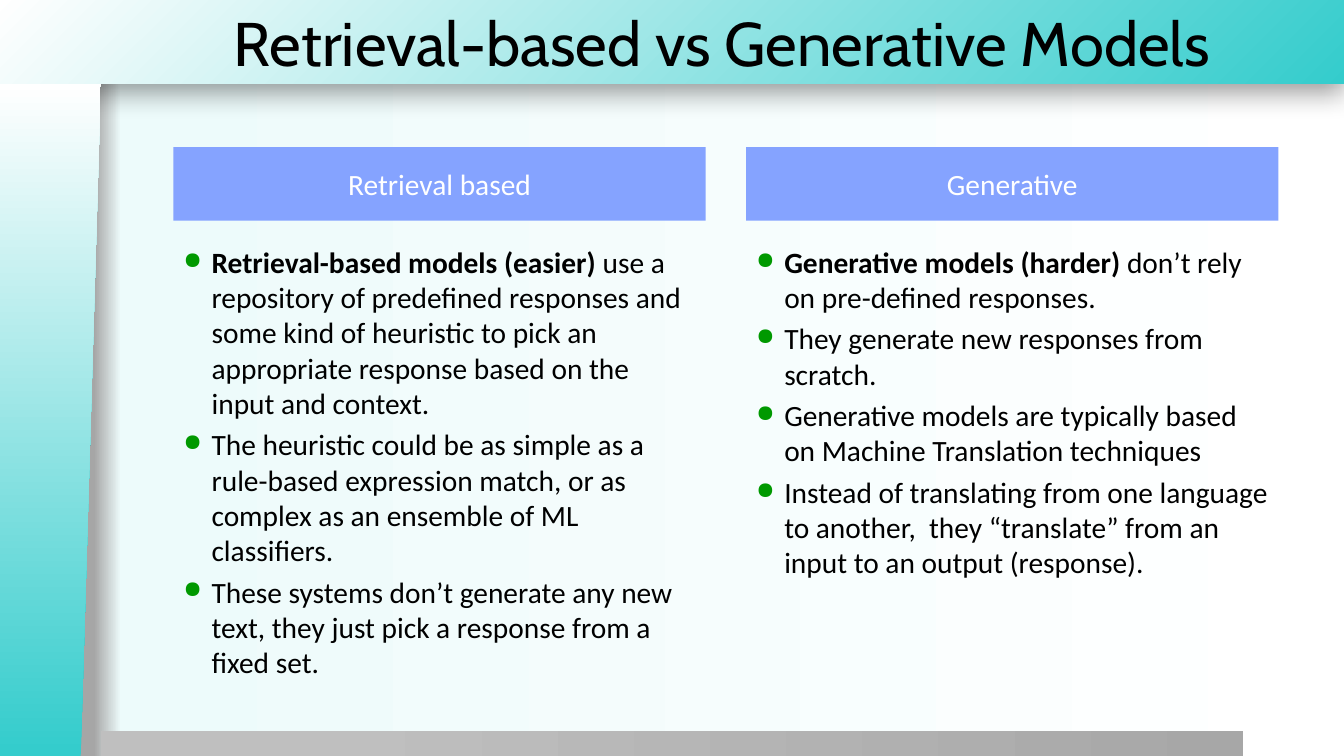
"""Build a slide that compares retrieval-based and generative models."""
from pptx import Presentation
from pptx.dml.color import RGBColor
from pptx.enum.shapes import MSO_SHAPE
from pptx.enum.text import MSO_ANCHOR, MSO_AUTO_SIZE, PP_ALIGN
from pptx.oxml import parse_xml
from pptx.oxml.ns import nsdecls, qn
from pptx.util import Inches, Pt

RECTANGLE = MSO_SHAPE.RECTANGLE
MANUAL_INPUT = MSO_SHAPE.FLOWCHART_MANUAL_INPUT
TOP, MIDDLE = MSO_ANCHOR.TOP, MSO_ANCHOR.MIDDLE
LEFT, CENTER = PP_ALIGN.LEFT, PP_ALIGN.CENTER
NO_AUTOFIT = MSO_AUTO_SIZE.NONE

BLACK = RGBColor(0x00, 0x00, 0x00)
WHITE = RGBColor(0xFF, 0xFF, 0xFF)
TEAL = RGBColor(0x34, 0xCC, 0xCC)
PALE_TEAL = RGBColor(0xED, 0xFB, 0xFB)
EDGE_GRAY = RGBColor(0xA6, 0xA6, 0xA6)
LIGHT_GRAY = RGBColor(0xBF, 0xBF, 0xBF)
DARK_GRAY = RGBColor(0xA7, 0xA7, 0xA7)
HEADING_BLUE = RGBColor(0x85, 0xA3, 0xFF)
BULLET_GREEN = RGBColor(0x00, 0x99, 0x00)

LINEAR = '<a:lin ang="0" scaled="0"/>'
FROM_CORNER = '<a:path path="circle"><a:fillToRect l="100000" t="100000"/></a:path>'

TITLE_FONT = {"name": "Cabin", "size": Pt(44), "bold": False}
BODY_FONT = {"name": "Calibri", "size": Pt(21)}
COLUMN_WIDTH = 5.28
COLUMNS = [
    (1.72, "Retrieval based", [
        ("Retrieval-based models (easier)",
         " use a repository of predefined responses and some kind of heuristic "
         "to pick an appropriate response based on the input and context."),
        ("", "The heuristic could be as simple as a rule-based expression match, "
             "or as complex as an ensemble of ML classifiers."),
        ("", "These systems don’t generate any new text, they just pick a "
             "response from a fixed set."),
    ]),
    (7.4, "Generative", [
        ("Generative models (harder)", " don’t rely on pre-defined responses."),
        ("", "They generate new responses from scratch."),
        ("", "Generative models are typically based on Machine Translation techniques"),
        ("", "Instead of translating from one language to another,  they "
             "“translate” from an input to an output (response)."),
    ]),
]


def apply_format(target, values):
    """Set each attribute in values on the target."""
    for attribute, value in values.items():
        setattr(target, attribute, value)


def set_gradient(fill, owner, stops, direction=LINEAR):
    """Give the fill inside owner a gradient with the listed stops."""
    fill.gradient()
    default_gradient = next(owner.iter(qn("a:gradFill")))
    stop_xml = "".join(
        f'<a:gs pos="{percent * 1000}"><a:srgbClr val="{color}"/></a:gs>'
        for percent, color in stops)
    gradient = parse_xml(
        f'<a:gradFill {nsdecls("a")} rotWithShape="1">'
        f'<a:gsLst>{stop_xml}</a:gsLst>{direction}</a:gradFill>')
    default_gradient.getparent().replace(default_gradient, gradient)


def add_panel(slide, box, kind=RECTANGLE):
    """Add a shape without line or shadow."""
    panel = slide.shapes.add_shape(kind, *map(Inches, box))
    panel.shadow.inherit = False
    panel.line.fill.background()
    return panel


def add_gradient_panel(slide, box, stops, direction=LINEAR, kind=RECTANGLE):
    """Add a decorative panel with a gradient fill."""
    panel = add_panel(slide, box, kind)
    set_gradient(panel.fill, panel._element, stops, direction)
    return panel


def add_header_shadow(header):
    """Drop a soft shadow below the header."""
    effects = next(header._element.iter(qn("a:effectLst")))
    effects.append(parse_xml(
        f'<a:outerShdw {nsdecls("a")} blurRad="{Pt(20)}" dist="{Pt(6)}" '
        'dir="5400000" algn="t" rotWithShape="0"><a:srgbClr val="000000">'
        '<a:alpha val="40000"/></a:srgbClr></a:outerShdw>'))


def add_frame(slide):
    """Add the background, the side and bottom panels and the header."""
    set_gradient(slide.background.fill, slide._element,
                 [(7, EDGE_GRAY), (9, PALE_TEAL), (100, WHITE)])
    header = add_gradient_panel(slide, (-0.01, 0, 13.34, 0.83),
                                [(0, TEAL), (100, WHITE)], FROM_CORNER)
    add_header_shadow(header)
    add_gradient_panel(slide, (1, 7.25, 11.33, 0.26),
                       [(20, LIGHT_GRAY), (100, DARK_GRAY)])
    side = add_gradient_panel(slide, (-2.84, 3.67, 6.68, 1),
                              [(1, TEAL), (100, WHITE)], kind=MANUAL_INPUT)
    side.rotation = 270
    next(side._element.iter(qn("a:xfrm"))).set("flipV", "1")
    return side


def add_run(paragraph, text, color, values):
    """Add a formatted run to the paragraph."""
    run = paragraph.add_run()
    run.text = text
    apply_format(run.font, values)
    run.font.color.rgb = color


def format_frame(frame, anchor):
    """Set wrapping, anchor and insets of a text frame."""
    apply_format(frame, {
        "word_wrap": True, "auto_size": NO_AUTOFIT, "vertical_anchor": anchor,
        "margin_left": Inches(0.1), "margin_right": Inches(0.1),
        "margin_top": Inches(0.05), "margin_bottom": Inches(0.05)})


def place_title(slide, text, below):
    """Place and format the title in front of the frame."""
    title = slide.shapes.title
    apply_format(title, {"left": Inches(2.22), "top": Inches(0),
                         "width": Inches(11.12), "height": Inches(0.83)})
    below._element.addnext(title._element)
    format_frame(title.text_frame, MIDDLE)
    paragraph = title.text_frame.paragraphs[0]
    paragraph.alignment = LEFT
    add_run(paragraph, text, BLACK, TITLE_FONT)


def add_heading(slide, left, text):
    """Add the coloured heading of a column."""
    heading = add_panel(slide, (left, 1.46, COLUMN_WIDTH, 0.73))
    heading.fill.solid()
    heading.fill.fore_color.rgb = HEADING_BLUE
    format_frame(heading.text_frame, MIDDLE)
    paragraph = heading.text_frame.paragraphs[0]
    paragraph.alignment = CENTER
    add_run(paragraph, text, WHITE, BODY_FONT)


def set_bullet(paragraph):
    """Give the paragraph a green bullet and a hanging indent."""
    properties = paragraph._p.get_or_add_pPr()
    properties.set("marL", str(Inches(0.28)))
    properties.set("indent", str(-Inches(0.28)))
    for bullet_part in (f'buClr {nsdecls("a")}><a:srgbClr val="{BULLET_GREEN}"/></a:buClr',
                        f'buSzPct {nsdecls("a")} val="80000"/',
                        f'buChar {nsdecls("a")} char="●"/'):
        properties.append(parse_xml(f"<a:{bullet_part}>"))


def add_points(slide, left, points):
    """Add the bulleted points of a column."""
    box = slide.shapes.add_textbox(
        *map(Inches, (left, 2.37, COLUMN_WIDTH, 4.78)))
    frame = box.text_frame
    format_frame(frame, TOP)
    for index, (lead, rest) in enumerate(points):
        paragraph = frame.add_paragraph() if index else frame.paragraphs[0]
        apply_format(paragraph, {"alignment": LEFT, "space_after": Pt(4.4)})
        set_bullet(paragraph)
        if lead:
            add_run(paragraph, lead, BLACK, {**BODY_FONT, "bold": True})
        add_run(paragraph, rest, BLACK, BODY_FONT)


def main():
    """Build and save the slide."""
    presentation = Presentation()
    apply_format(presentation, {"slide_width": Inches(13.33),
                                "slide_height": Inches(7.5)})
    slide = presentation.slides.add_slide(presentation.slide_layouts[5])
    side = add_frame(slide)
    place_title(slide, "Retrieval-based vs Generative Models", side)
    for left, heading, points in COLUMNS:
        add_points(slide, left, points)
        add_heading(slide, left, heading)
    presentation.save("out.pptx")


if __name__ == "__main__":
    main()
